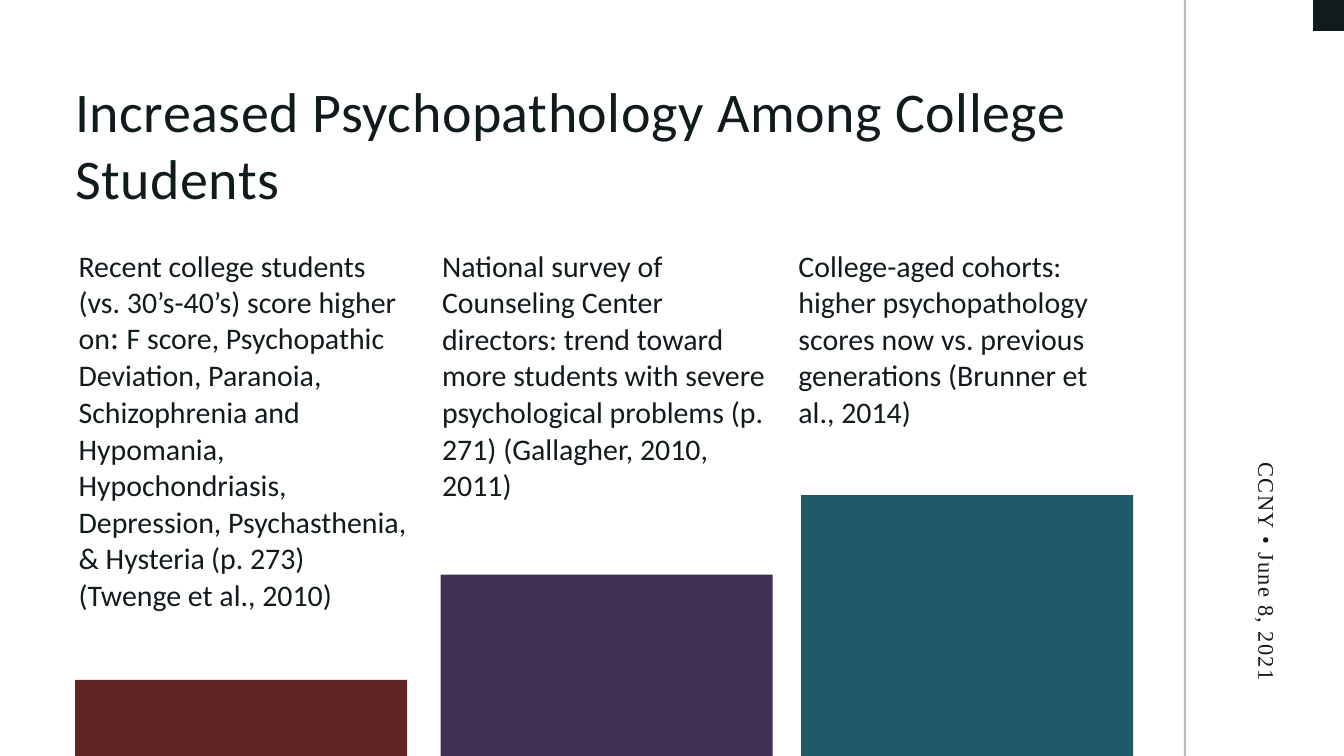
from lxml.etree import SubElement
from pptx import Presentation
from pptx.dml.color import RGBColor
from pptx.enum.shapes import MSO_SHAPE as Shape
from pptx.enum.text import PP_ALIGN as Align
from pptx.oxml.ns import qn
from pptx.util import Cm, Pt

INK = RGBColor(0x11, 0x1B, 0x1E)
RED = RGBColor(0x63, 0x25, 0x23)
PURPLE = RGBColor(0x40, 0x31, 0x52)
TEAL = RGBColor(0x21, 0x59, 0x68)

WIDTH, HEIGHT = 50.8, 28.58
COL_TOP, COL_WIDTH, BAR_WIDTH = 9.32, 12.45, 12.55

TITLE = "Increased Psychopathology Among College Students"
FOOTER = "CCNY • June 8, 2021"

# text left, text height, bar left, bar top, bar colour, runs (text, size)
COLUMNS = [
    (2.97, 15.24, 2.84, 25.7, RED, [
        ("Recent college students (vs. 30’s-40’s) score higher on", 32),
        (": ", 36),
        ("F score, Psychopathic Deviation, Paranoia, Schizophrenia and "
         "Hypomania, Hypochondriasis, Depression, Psychasthenia, "
         "& Hysteria", 32),
        (" ", 28),
        ("(p. 273) (Twenge et al., 2010)", 32)]),
    (16.71, 9.68, 16.66, 21.72, PURPLE, [
        ("National survey of Counseling Center directors: trend toward "
         "more students with severe psychological problems (p. 271) "
         "(Gallagher, 2010, 2011)", 32)]),
    (30.18, 9.68, 30.28, 18.72, TEAL, [
        ("College-aged cohorts: higher psychopathology scores now vs. "
         "previous generations (Brunner et al., 2014)", 32)]),
]


def add_text(slide, runs, left, top, width, height, lead,
             face="Calibri", space=0, align=Align.LEFT, turn=0):
    """Add a text box; lead is line spacing and space letter spacing, in points."""
    box = slide.shapes.add_textbox(Cm(left), Cm(top), Cm(width), Cm(height))
    box.rotation = turn
    frame = box.text_frame
    frame.word_wrap = True
    frame.margin_left = frame.margin_right = 0
    frame.margin_top = frame.margin_bottom = 0
    para = frame.paragraphs[0]
    para.alignment = align
    para.line_spacing = Pt(lead)
    for text, size in runs:
        run = para.add_run()
        run.text = text
        run.font.name = face
        run.font.size = Pt(size)
        run.font.color.rgb = INK
        if space:
            run._r.get_or_add_rPr().set("spc", str(round(space * 100)))


def add_block(slide, left, top, width, height, color, alpha=100):
    """Add a plain rectangle; alpha is its opacity in percent."""
    block = slide.shapes.add_shape(
        Shape.RECTANGLE, Cm(left), Cm(top), Cm(width), Cm(height))
    block.shadow.inherit = False
    block.fill.solid()
    block.fill.fore_color.rgb = color
    block.line.fill.background()
    if alpha < 100:
        tint = block._element.spPr.find(".//" + qn("a:srgbClr"))
        SubElement(tint, qn("a:alpha")).set("val", str(alpha * 1000))


def main():
    deck = Presentation()
    deck.slide_width, deck.slide_height = Cm(WIDTH), Cm(HEIGHT)
    slide = deck.slides.add_slide(deck.slide_layouts[6])

    add_text(slide, [(TITLE, 60)], 2.84, 2.9, 38.86, 5.13, lead=72, space=0.6)
    for left, tall, bar_left, bar_top, color, runs in COLUMNS:
        add_text(slide, runs, left, COL_TOP, COL_WIDTH, tall, lead=39.2)
        add_block(slide, bar_left, bar_top, BAR_WIDTH, HEIGHT - bar_top, color)

    add_block(slide, 44.75, 0, 0.08, HEIGHT, INK, alpha=30)
    add_text(slide, [(FOOTER, 24)], 38.46, 15.6, 19.1, 1.14, lead=33.6,
             face="Times New Roman", space=1.4, align=Align.RIGHT, turn=90)
    add_block(slide, WIDTH - 1.17, 0, 1.17, 1.17, INK)

    deck.save("out.pptx")


if __name__ == "__main__":
    main()
